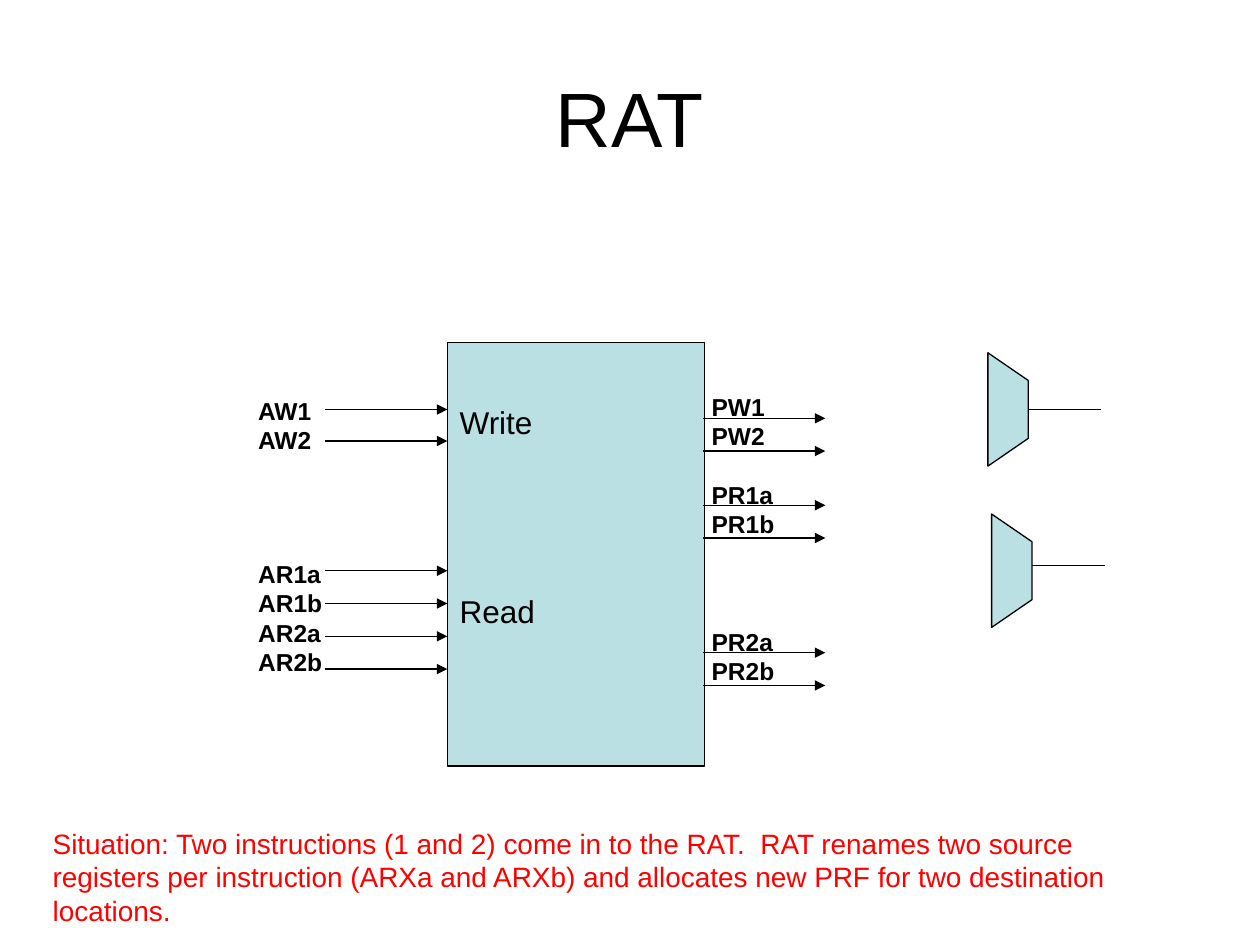
from lxml import etree
from pptx import Presentation
from pptx.dml.color import RGBColor
from pptx.enum.shapes import MSO_CONNECTOR, MSO_SHAPE
from pptx.enum.text import MSO_ANCHOR, PP_ALIGN
from pptx.oxml.ns import qn
from pptx.util import Inches, Pt

STRAIGHT = MSO_CONNECTOR.STRAIGHT
RECTANGLE = MSO_SHAPE.RECTANGLE
TOP, MIDDLE = MSO_ANCHOR.TOP, MSO_ANCHOR.MIDDLE
LEFT, CENTER = PP_ALIGN.LEFT, PP_ALIGN.CENTER
COLORS = {"ink": "000000", "block": "BBE0E3", "note": "FF0000"}
FONT = "Arial"
LINE_FACTOR = 1.2
ARROW_LENGTH = 0.97


def color(name):
    return RGBColor.from_string(COLORS[name])


def write_lines(frame, lines, size, ink="ink", bold=False, align=LEFT):
    for index, (text, gap) in enumerate(lines):
        para = frame.paragraphs[0] if index == 0 else frame.add_paragraph()
        para.text = text
        para.alignment = align
        para.line_spacing = Pt(size * LINE_FACTOR)
        para.space_before = Pt(gap * size * LINE_FACTOR)
        para.font.name = FONT
        para.font.size = Pt(size)
        para.font.bold = bold
        para.font.color.rgb = color(ink)


def add_text(page, left, top, width, height, lines, size, wrap=False, anchor=TOP, **style):
    box = page.shapes.add_textbox(Inches(left), Inches(top), Inches(width), Inches(height))
    box.text_frame.word_wrap = wrap
    box.text_frame.vertical_anchor = anchor
    write_lines(box.text_frame, lines, size, **style)


def style_block(shape):
    shape.shadow.inherit = False
    shape.fill.solid()
    shape.fill.fore_color.rgb = color("block")
    shape.line.color.rgb = color("ink")
    shape.line.width = Pt(0.75)


def add_table_block(page):
    block = page.shapes.add_shape(RECTANGLE, Inches(3.55), Inches(2.72), Inches(2.04), Inches(3.36))
    style_block(block)
    frame = block.text_frame
    frame.word_wrap = False
    frame.vertical_anchor = TOP
    frame.margin_top = Inches(0.48)
    write_lines(frame, [("Write", 0), ("Read", 4)], 18)


def add_wire(page, left, y, length, arrow=False):
    wire = page.shapes.add_connector(STRAIGHT, Inches(left), Inches(y), Inches(left + length), Inches(y))
    wire.line.color.rgb = color("ink")
    wire.line.width = Pt(0.75)
    if arrow:
        etree.SubElement(wire.line._get_or_add_ln(), qn("a:tailEnd"), type="triangle")
    etree.SubElement(wire._element.spPr, qn("a:effectLst"))


def add_mux(page, left, top, output_y):
    width, height, slant = 0.32, 0.9, 0.22
    right, bottom = left + width, top + height
    corners = [(right, top + slant), (right, bottom - slant), (left, bottom)]
    builder = page.shapes.build_freeform(Inches(left), Inches(top))
    builder.add_line_segments([(Inches(x), Inches(y)) for x, y in corners], close=True)
    style_block(builder.convert_to_shape())
    add_wire(page, right, output_y, 0.58)


def main():
    deck = Presentation()
    deck.slide_width, deck.slide_height = Inches(10), Inches(7.5)
    page = deck.slides.add_slide(deck.slide_layouts[6])

    add_text(page, 0.5, 0.3, 9, 1.25, [("RAT", 0)], 44, wrap=True, anchor=MIDDLE, align=CENTER)
    add_table_block(page)
    for y in (3.25, 3.5, 4.53, 4.79, 5.05, 5.31):
        add_wire(page, 2.58, y, ARROW_LENGTH, arrow=True)
    for first_y in (3.32, 4.01, 5.18):
        for y in (first_y, first_y + 0.26):
            add_wire(page, 5.58, y, ARROW_LENGTH, arrow=True)

    inputs = [("AW1", 0), ("AW2", 0), ("AR1a", 3.56), ("AR1b", 0), ("AR2a", 0), ("AR2b", 0)]
    outputs = [("PW1", 0), ("PW2", 0), ("PR1a", 1), ("PR1b", 0), ("PR2a", 3), ("PR2b", 0)]
    add_text(page, 1.95, 3.09, 0.71, 2.29, inputs, 14, bold=True)
    add_text(page, 5.55, 3.06, 0.7, 2.47, outputs, 14, bold=True)

    add_mux(page, 7.84, 2.8, 3.25)
    add_mux(page, 7.87, 4.08, 4.49)

    situation = [
        ("Situation: Two instructions (1 and 2) come in to the RAT.  RAT renames two source", 0),
        ("registers per instruction (ARXa and ARXb) and allocates new PRF for two destination", 0),
        ("locations.", 0),
    ]
    add_text(page, 0.32, 6.51, 8.66, 0.94, situation, 16, ink="note")
    deck.save("out.pptx")


if __name__ == "__main__":
    main()
